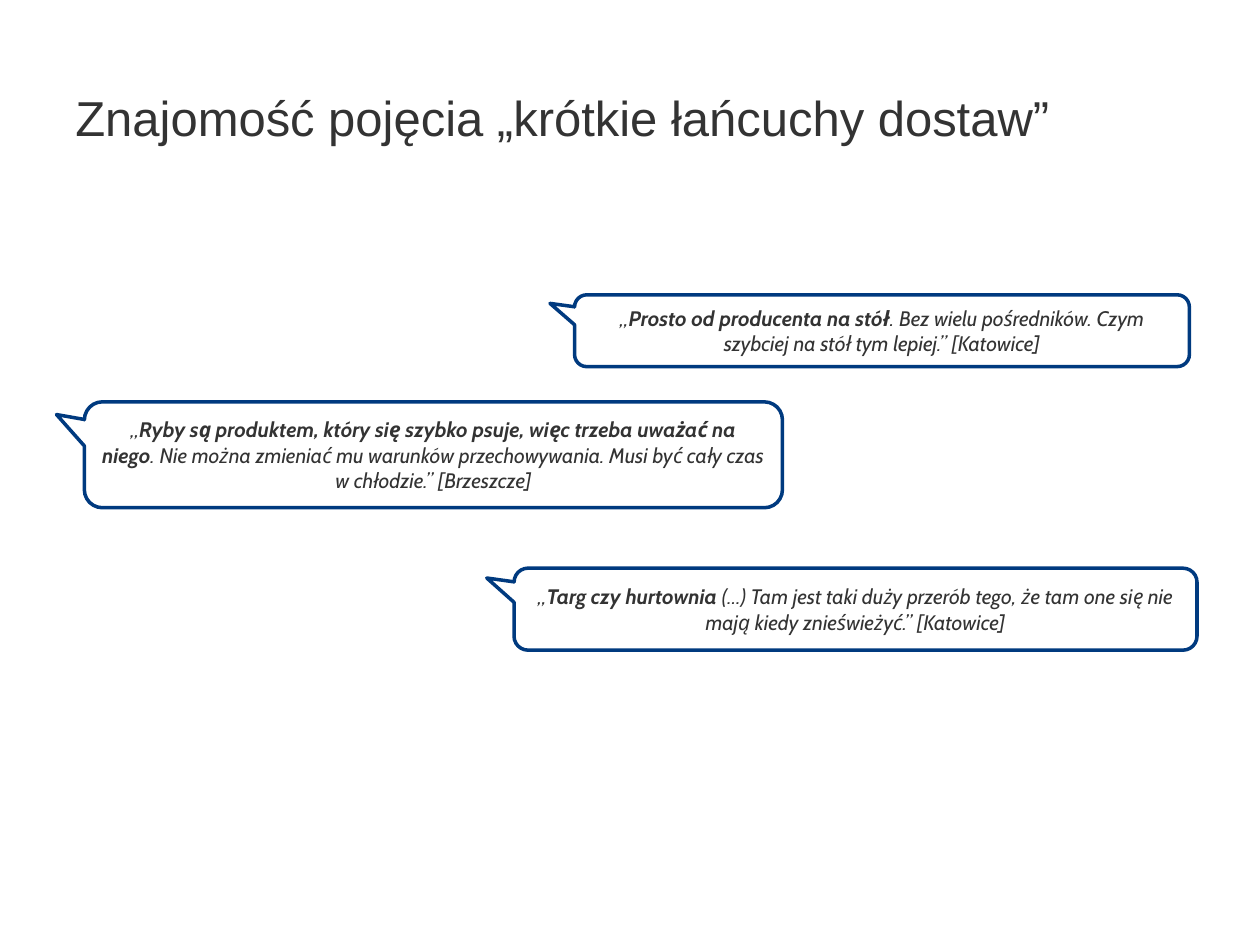
"""Build a slide of interview quotes about short supply chains."""
from dataclasses import dataclass

from pptx import Presentation
from pptx.dml.color import RGBColor as RGB
from pptx.enum.shapes import MSO_SHAPE as Shape
from pptx.enum.text import MSO_ANCHOR as Anchor, PP_ALIGN as Align
from pptx.util import Inches, Pt

SLIDE_W, SLIDE_H = Inches(10), Inches(7.5)


@dataclass(frozen=True)
class Theme:
    ink: RGB = RGB(0x33, 0x33, 0x33)
    outline: RGB = RGB(0x00, 0x3A, 0x7F)
    paper: RGB = RGB(0xFF, 0xFF, 0xFF)
    title_font: str = "Arial"
    quote_font: str = "Cabin"
    title_size: Pt = Pt(28)
    quote_size: Pt = Pt(12)
    line_width: Pt = Pt(2)
    callout: tuple = (-0.54, -0.38, 0.17)


@dataclass(frozen=True)
class Box:
    """Position and size in percent of the slide."""
    left: float
    top: float
    width: float
    height: float

    def emu(self) -> tuple:
        return (int(SLIDE_W * self.left / 100), int(SLIDE_H * self.top / 100),
                int(SLIDE_W * self.width / 100), int(SLIDE_H * self.height / 100))


@dataclass(frozen=True)
class Quote:
    box: Box
    strong: str
    rest: str


THEME = Theme()
TITLE = "Znajomość pojęcia „krótkie łańcuchy dostaw”"
TITLE_BOX = Box(5, 4, 90, 16.67)
QUOTES = (
    Quote(Box(45.6, 31.2, 48.8, 7.6), "Prosto od producenta na stół",
          ". Bez wielu pośredników. Czym szybciej na stół tym lepiej.” [Katowice]"),
    Quote(Box(6.7, 42.53, 55.4, 11.2),
          "Ryby są produktem, który się szybko psuje, więc trzeba uważać na niego",
          ". Nie można zmieniać mu warunków przechowywania. "
          "Musi być cały czas w chłodzie.” [Brzeszcze]"),
    Quote(Box(40.8, 60.13, 54.2, 8.67), "Targ czy hurtownia ",
          "(…) Tam jest taki duży przerób tego, że tam one się nie "
          "mają kiedy znieświeżyć.” [Katowice]"),
)


def style_frame(tf, font: str, size: Pt):
    """Set up a wrapped, middle-anchored frame and return its paragraph."""
    tf.word_wrap = True
    tf.vertical_anchor = Anchor.MIDDLE
    p = tf.paragraphs[0]
    p.font.name, p.font.size = font, size
    p.font.color.rgb = THEME.ink
    return p


def add_title(s, text: str, box: Box) -> None:
    """Add the slide heading."""
    sp = s.shapes.add_textbox(*box.emu())
    p = style_frame(sp.text_frame, THEME.title_font, THEME.title_size)
    p.add_run().text = text


def add_quote(s, quote: Quote) -> None:
    """Add a speech callout whose key phrase is bold."""
    sp = s.shapes.add_shape(Shape.ROUNDED_RECTANGULAR_CALLOUT, *quote.box.emu())
    for i, value in enumerate(THEME.callout):
        sp.adjustments[i] = value
    sp.shadow.inherit = False
    sp.fill.solid()
    sp.fill.fore_color.rgb = THEME.paper
    sp.line.color.rgb = THEME.outline
    sp.line.width = THEME.line_width
    p = style_frame(sp.text_frame, THEME.quote_font, THEME.quote_size)
    p.alignment = Align.CENTER
    p.font.italic = True
    for text, bold in (("„", False), (quote.strong, True), (quote.rest, False)):
        r = p.add_run()
        r.text, r.font.bold = text, bold


def main() -> None:
    """Assemble and save the slide."""
    prs = Presentation()
    prs.slide_width, prs.slide_height = SLIDE_W, SLIDE_H
    s = prs.slides.add_slide(prs.slide_layouts[6])
    add_title(s, TITLE, TITLE_BOX)
    for quote in QUOTES:
        add_quote(s, quote)
    prs.save("out.pptx")


if __name__ == "__main__":
    main()
